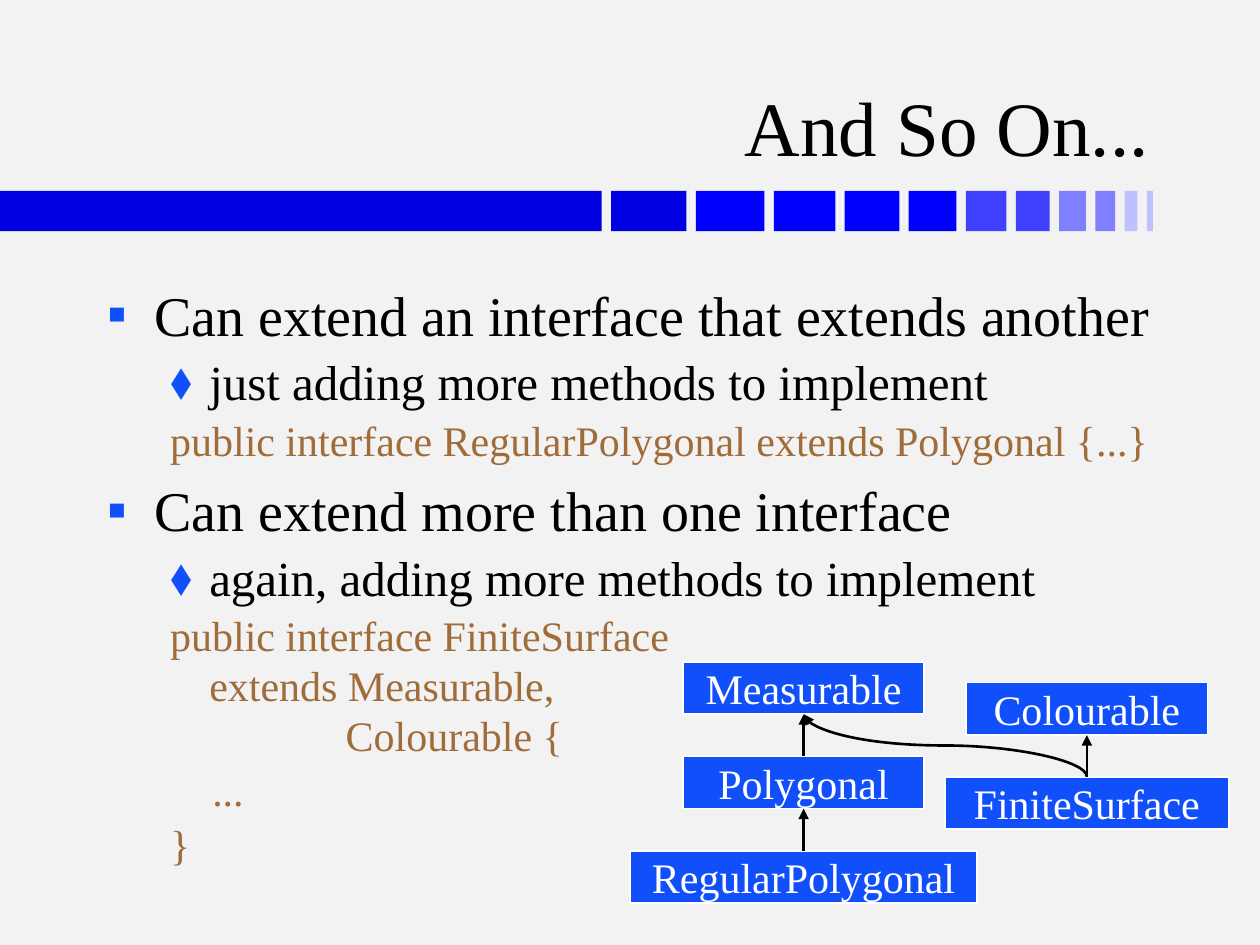
import dataclasses

import lxml.etree
import pptx
import pptx.dml.color
import pptx.enum.shapes
import pptx.enum.text
import pptx.oxml
import pptx.oxml.ns
import pptx.util
from pptx.util import Cm, Pt

COLOURS = {
    "background": "F2F2F2",
    "text": "000000",
    "code": "A06D3A",
    "accent": "114FFB",
    "white": "FFFFFF",
}
STRIP_FILLS = (
    ["0000E0"] * 2 + ["0000FF"] * 4 + ["4040FF"] * 2 + ["8080FF"] * 2 + ["C0C0FF"] * 2
)
FONT = "Times New Roman"
LINE_HEIGHT = 1.19
BOX_HEIGHT = 1.06


@dataclasses.dataclass
class Line:
    text: str
    size: int
    colour: str
    margin: float
    indent: float = 0
    before: float = 0
    bullet: str = ""


@dataclasses.dataclass
class TypeBox:
    name: str
    centre: float
    top: float
    width: float


def point(text: str, before: float = 6.4) -> Line:
    return Line(text, 32, "text", 0.95, -0.95, before, "▪")


def subpoint(text: str) -> Line:
    return Line(text, 28, "text", 2.06, -0.79, 2.8, "⬧")


def code(text: str, margin: float = 1.27, before: float = 2.4) -> Line:
    return Line(text, 24, "code", margin, before=before)


LINES = [
    point("Can extend an interface that extends another", before=0),
    subpoint("just adding more methods to implement"),
    code("public interface RegularPolygonal extends Polygonal {...}"),
    point("Can extend more than one interface"),
    subpoint("again, adding more methods to implement"),
    code("public interface FiniteSurface"),
    code("extends Measurable,", margin=2.06, before=0),
    code("Colourable {", margin=4.81, before=0),
    code("...", margin=2.12),
    code("}"),
]

MEASURABLE = TypeBox("Measurable", 16.2, 13.34, 4.87)
POLYGONAL = TypeBox("Polygonal", 16.2, 15.24, 4.87)
REGULAR = TypeBox("RegularPolygonal", 16.2, 17.15, 6.99)
COLOURABLE = TypeBox("Colourable", 21.91, 13.76, 4.87)
FINITE = TypeBox("FiniteSurface", 21.91, 15.66, 5.72)


def rgb(hex_colour: str) -> pptx.dml.color.RGBColor:
    return pptx.dml.color.RGBColor.from_string(hex_colour)


def set_font(paragraph, size: int, colour: str) -> None:
    paragraph.font.name = FONT
    paragraph.font.size = Pt(size)
    paragraph.font.color.rgb = rgb(COLOURS[colour])


def add_bullet(paragraph, character: str) -> None:
    properties = paragraph._p.get_or_add_pPr()
    namespace = pptx.oxml.ns.nsdecls("a")
    for xml in (
        f'<a:buClr {namespace}><a:srgbClr val="{COLOURS["accent"]}"/></a:buClr>',
        f'<a:buFont {namespace} typeface="{FONT}"/>',
        f'<a:buChar {namespace} char="{character}"/>',
    ):
        properties.insert_element_before(
            pptx.oxml.parse_xml(xml), "a:tabLst", "a:defRPr", "a:extLst"
        )


def add_rectangle(slide, left: float, top: float, width: float, height: float, fill: str):
    rectangle = slide.shapes.add_shape(
        pptx.enum.shapes.MSO_SHAPE.RECTANGLE, Cm(left), Cm(top), Cm(width), Cm(height)
    )
    rectangle.shadow.inherit = False
    rectangle.fill.solid()
    rectangle.fill.fore_color.rgb = rgb(fill)
    rectangle.line.fill.background()
    return rectangle


def add_strip(slide) -> None:
    left = 0.0
    for index, fill in enumerate(STRIP_FILLS):
        width = 12.13 if index == 0 else 1.52 - 0.14 * (index - 1)
        add_rectangle(slide, left, 3.85, width, 0.81, fill)
        left += width + 0.19


def add_title(slide) -> None:
    title = slide.shapes.title
    title.left, title.top, title.width, title.height = Cm(1.88), Cm(0.48), Cm(21.54), Cm(3.12)
    title.text_frame.text = "And So On..."
    title.text_frame.auto_size = pptx.enum.text.MSO_AUTO_SIZE.NONE
    title.text_frame.vertical_anchor = pptx.enum.text.MSO_ANCHOR.BOTTOM
    heading = title.text_frame.paragraphs[0]
    heading.alignment = pptx.enum.text.PP_ALIGN.RIGHT
    set_font(heading, 44, "text")


def add_body(slide) -> None:
    frame = slide.shapes.add_textbox(Cm(1.91), Cm(5.54), Cm(21.59), Cm(11.43)).text_frame
    frame.word_wrap = True
    for index, line in enumerate(LINES):
        paragraph = frame.add_paragraph() if index else frame.paragraphs[0]
        paragraph.text = line.text
        paragraph.space_before = Pt(line.before)
        paragraph.line_spacing = Pt(line.size * LINE_HEIGHT)
        set_font(paragraph, line.size, line.colour)
        properties = paragraph._p.get_or_add_pPr()
        properties.set("marL", str(Cm(line.margin)))
        properties.set("indent", str(Cm(line.indent)))
        if line.bullet:
            add_bullet(paragraph, line.bullet)


def add_type_box(slide, box: TypeBox) -> None:
    rectangle = add_rectangle(
        slide, box.centre - box.width / 2, box.top, box.width, BOX_HEIGHT, COLOURS["accent"]
    )
    rectangle.line.color.rgb = rgb(COLOURS["white"])
    rectangle.line.width = Pt(1)
    frame = rectangle.text_frame
    frame.word_wrap = False
    frame.margin_top = frame.margin_bottom = 0
    frame.vertical_anchor = pptx.enum.text.MSO_ANCHOR.MIDDLE
    frame.text = box.name
    frame.paragraphs[0].alignment = pptx.enum.text.PP_ALIGN.CENTER
    set_font(frame.paragraphs[0], 24, "white")


def add_arrow(slide, child: TypeBox, parent: TypeBox) -> None:
    kinds = pptx.enum.shapes.MSO_CONNECTOR
    start_x, start_y = child.centre, child.top
    end_x, end_y = parent.centre, parent.top + BOX_HEIGHT
    curved = start_x != end_x
    if curved:
        middle_x, middle_y = (start_x + end_x) / 2, (start_y + end_y) / 2
        half_width, half_height = (start_y - end_y) / 2, (start_x - end_x) / 2
        start_x, end_x = middle_x - half_width, middle_x + half_width
        start_y, end_y = middle_y + half_height, middle_y - half_height
    arrow = slide.shapes.add_connector(
        kinds.CURVE if curved else kinds.STRAIGHT,
        Cm(start_x), Cm(start_y), Cm(end_x), Cm(end_y),
    )
    arrow.line.color.rgb = rgb(COLOURS["text"])
    arrow.line.width = Pt(1.5)
    properties = arrow._element.spPr
    if curved:
        properties.find(pptx.oxml.ns.qn("a:xfrm")).set("rot", "16200000")
    outline = properties.find(pptx.oxml.ns.qn("a:ln"))
    lxml.etree.SubElement(outline, pptx.oxml.ns.qn("a:tailEnd"), type="triangle")
    lxml.etree.SubElement(properties, pptx.oxml.ns.qn("a:effectLst"))


def main() -> None:
    presentation = pptx.Presentation()
    presentation.slide_width, presentation.slide_height = Cm(25.4), Cm(19.05)
    slide = presentation.slides.add_slide(presentation.slide_layouts[5])
    slide.background.fill.solid()
    slide.background.fill.fore_color.rgb = rgb(COLOURS["background"])
    add_strip(slide)
    add_title(slide)
    add_body(slide)
    for box in (MEASURABLE, POLYGONAL, REGULAR, COLOURABLE, FINITE):
        add_type_box(slide, box)
    for child, parent in (
        (POLYGONAL, MEASURABLE),
        (REGULAR, POLYGONAL),
        (FINITE, COLOURABLE),
        (FINITE, MEASURABLE),
    ):
        add_arrow(slide, child, parent)
    presentation.save("out.pptx")


if __name__ == "__main__":
    main()
